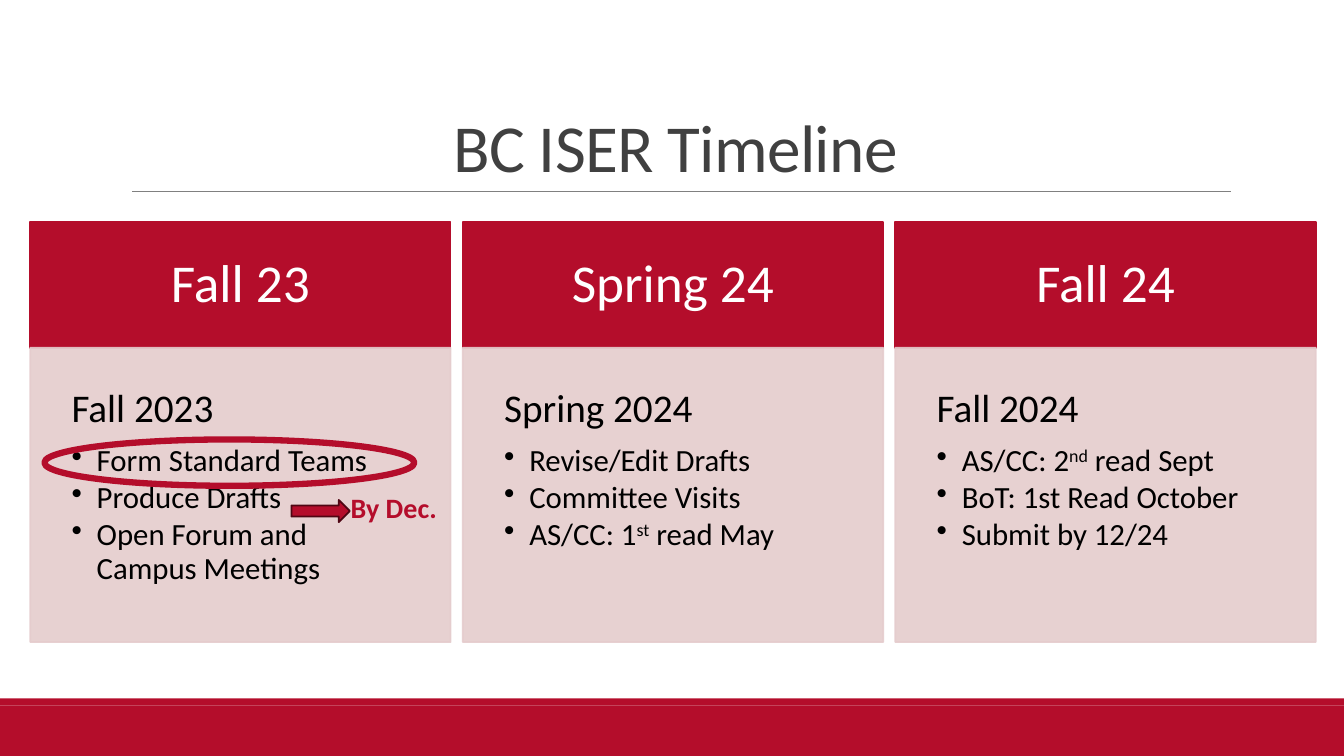
from dataclasses import dataclass

from lxml import etree
from pptx import Presentation
from pptx.dml.color import RGBColor
from pptx.enum.shapes import MSO_CONNECTOR, MSO_SHAPE
from pptx.enum.text import MSO_ANCHOR, MSO_AUTO_SIZE, PP_ALIGN
from pptx.oxml.ns import qn
from pptx.util import Inches, Pt

RECT, OVAL, ARROW = MSO_SHAPE.RECTANGLE, MSO_SHAPE.OVAL, MSO_SHAPE.RIGHT_ARROW
LEFT, CENTER = PP_ALIGN.LEFT, PP_ALIGN.CENTER
TOP, MIDDLE, BOTTOM = MSO_ANCHOR.TOP, MSO_ANCHOR.MIDDLE, MSO_ANCHOR.BOTTOM

# Content: text between ^ marks is superscript
TITLE = "BC ISER Timeline"
TERMS = [
    ("Fall 23", "Fall 2023",
     ["Form Standard Teams", "Produce Drafts", "Open Forum and Campus Meetings"]),
    ("Spring 24", "Spring 2024",
     ["Revise/Edit Drafts", "Committee Visits", "AS/CC: 1^st^ read May"]),
    ("Fall 24", "Fall 2024",
     ["AS/CC: 2^nd^ read Sept", "BoT: 1st Read October", "Submit by 12/24"]),
]
DEADLINE = "By Dec."


@dataclass(frozen=True)
class Theme:
    font: str = "Calibri"
    red: str = "B40D2B"
    dark_red: str = "4F0613"
    pink: str = "E5CCCD"
    ink: str = "000000"
    title_ink: str = "404040"
    rule: str = "808080"
    white: str = "FFFFFF"
    title_size: int = 48
    header_size: int = 38
    term_size: int = 28
    task_size: int = 22
    deadline_size: int = 20


theme = Theme()

# Grid, in inches
SLIDE_W, SLIDE_H = 13.33, 7.5
CARD_LEFT, CARD_TOP, CARD_W, CARD_GAP = 0.3, 2.2, 4.17, 0.12
HEADER_H, BODY_H = 1.25, 2.92
HEADER_INSET, BODY_INSET = 0.33, 0.41
TASK_INDENT = 0.25
FOOTER_H, FOOTER_EDGE = 0.5, 0.07

prs = Presentation()
prs.slide_width, prs.slide_height = Inches(SLIDE_W), Inches(SLIDE_H)
slide = prs.slides.add_slide(prs.slide_layouts[5])


def inches(*lengths):
    return [Inches(length) for length in lengths]


def rgb(color):
    return RGBColor.from_string(color)


def add_block(kind, box, fill=None, line=None, width=1.25):
    block = slide.shapes.add_shape(kind, *inches(*box))
    block.shadow.inherit = False
    if fill:
        block.fill.solid()
        block.fill.fore_color.rgb = rgb(fill)
    else:
        block.fill.background()
    if line:
        block.line.color.rgb = rgb(line)
        block.line.width = Pt(width)
    else:
        block.line.fill.background()
    return block


def set_opacity(block, percent):
    for color in block.element.spPr.iter(qn("a:srgbClr")):
        etree.SubElement(color, qn("a:alpha"), val=str(percent * 1000))


def set_frame(frame, anchor, inset):
    frame.word_wrap = True
    frame.vertical_anchor = anchor
    frame.margin_left = frame.margin_right = Inches(inset)
    frame.margin_top = frame.margin_bottom = Inches(inset)


def write(paragraph, text, size, color, align=LEFT, spacing=0.9, after=0, bold=False):
    paragraph.alignment = align
    paragraph.line_spacing = spacing
    paragraph.space_after = Pt(after)
    for position, part in enumerate(text.split("^")):
        run = paragraph.add_run()
        run.text = part
        run.font.name, run.font.size, run.font.bold = theme.font, Pt(size), bold
        run.font.color.rgb = rgb(color)
        if position % 2:
            run.font._element.set("baseline", "30000")


def add_bullet(paragraph):
    paragraph.level = 1
    props = paragraph._p.get_or_add_pPr()
    props.set("marL", str(Inches(TASK_INDENT)))
    props.set("indent", str(-Inches(TASK_INDENT)))
    etree.SubElement(props, qn("a:buChar"), char="•")


# Footer band and its upper edge
footer_top = SLIDE_H - FOOTER_H
add_block(RECT, (0, footer_top, SLIDE_W, FOOTER_H), theme.red)
add_block(RECT, (0, footer_top - FOOTER_EDGE, SLIDE_W, FOOTER_EDGE), theme.red)

# Title and rule below it
rule = slide.shapes.add_connector(MSO_CONNECTOR.STRAIGHT, *inches(1.31, 1.9, 12.21, 1.9))
rule.line.color.rgb = rgb(theme.rule)
rule.line.width = Pt(0.5)
etree.SubElement(rule._element.spPr, qn("a:effectLst"))

title = slide.shapes.title
title.left, title.top, title.width, title.height = inches(1.2, 0.31, 11, 1.59)
set_frame(title.text_frame, BOTTOM, 0.05)
title.text_frame.auto_size = MSO_AUTO_SIZE.NONE
title_line = title.text_frame.paragraphs[0]
write(title_line, TITLE, theme.title_size, theme.title_ink, CENTER, 0.85)
title_line.runs[0].font._element.set("spc", "-50")

# One card per term
for column, (header_text, term, tasks) in enumerate(TERMS):
    left = CARD_LEFT + column * (CARD_W + CARD_GAP)
    header = add_block(RECT, (left, CARD_TOP, CARD_W, HEADER_H), theme.red, theme.red)
    set_frame(header.text_frame, MIDDLE, HEADER_INSET)
    write(header.text_frame.paragraphs[0], header_text, theme.header_size,
          theme.white, CENTER)

    body = add_block(RECT, (left, CARD_TOP + HEADER_H, CARD_W, BODY_H),
                     theme.pink, theme.pink)
    set_opacity(body, 90)
    set_frame(body.text_frame, TOP, BODY_INSET)
    write(body.text_frame.paragraphs[0], term, theme.term_size, theme.ink, after=9.8)
    for task in tasks:
        task_line = body.text_frame.add_paragraph()
        write(task_line, task, theme.task_size, theme.ink, after=2.7)
        add_bullet(task_line)

# Highlighted task and its deadline
add_block(OVAL, (0.44, 4.36, 3.67, 0.46), line=theme.red, width=4.5)
add_block(ARROW, (2.89, 4.96, 0.58, 0.22), theme.red, theme.dark_red)
deadline = slide.shapes.add_textbox(*inches(3.38, 4.82, 1.2, 0.44))
deadline.text_frame.word_wrap = True
write(deadline.text_frame.paragraphs[0], DEADLINE, theme.deadline_size, theme.red,
      spacing=1.0, bold=True)

prs.save("out.pptx")
